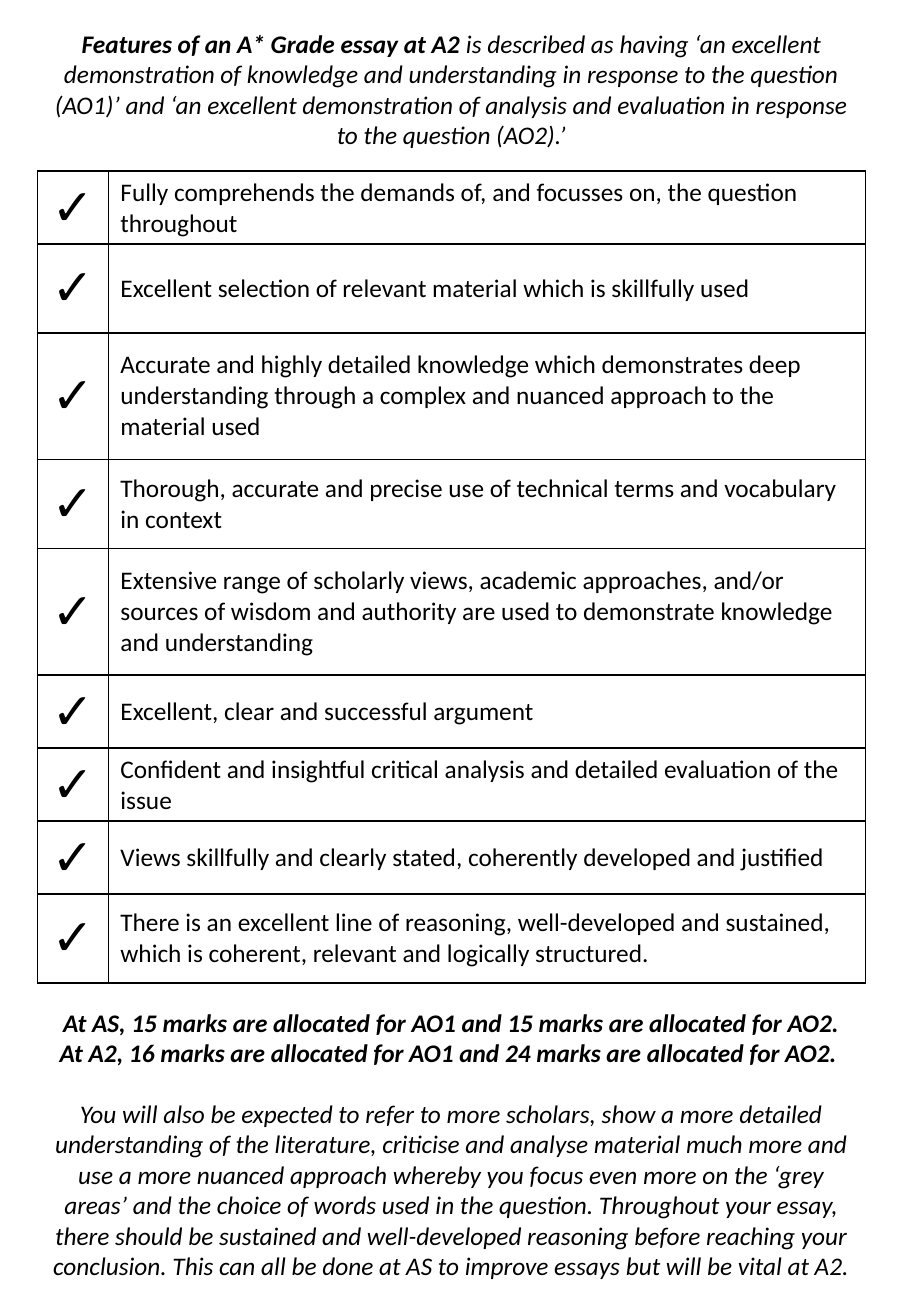
import lxml.etree
import pptx
import pptx.dml.color
import pptx.enum.text
import pptx.oxml.ns
import pptx.util

BLACK = pptx.dml.color.RGBColor(0, 0, 0)
CENTER = pptx.enum.text.PP_ALIGN.CENTER
LEFT = pptx.enum.text.PP_ALIGN.LEFT
MIDDLE = pptx.enum.text.MSO_ANCHOR.MIDDLE
SCALE = 7620
MARGIN, WIDTH = 37, 818
CHECK_WIDTH = 70
SHORT, MEDIUM, TALL = 72, 88, 125

CRITERIA = [
    (SHORT, "Fully comprehends the demands of, and focusses on, the question throughout"),
    (MEDIUM, "Excellent selection of relevant material which is skillfully used"),
    (TALL, "Accurate and highly detailed knowledge which demonstrates deep understanding "
           "through a complex and nuanced approach to the material used"),
    (MEDIUM, "Thorough, accurate and precise use of technical terms and vocabulary in context"),
    (TALL, "Extensive range of scholarly views, academic approaches, and/or sources of wisdom "
           "and authority are used to demonstrate knowledge and understanding"),
    (SHORT, "Excellent, clear and successful argument"),
    (SHORT, "Confident and insightful critical analysis and detailed evaluation of the issue"),
    (SHORT, "Views skillfully and clearly stated, coherently developed and justified"),
    (MEDIUM, "There is an excellent line of reasoning, well-developed and sustained, "
             "which is coherent, relevant and logically structured."),
]
GRADE_TITLE = "Features of an A* Grade essay at A2 "
GRADE_DESCRIPTION = (
    "is described as having ‘an excellent demonstration of knowledge and understanding "
    "in response to the question (AO1)’ and ‘an excellent demonstration of analysis and "
    "evaluation in response to the question (AO2).’"
)
MARKS = (
    "At AS, 15 marks are allocated for AO1 and 15 marks are allocated for AO2. "
    "At A2, 16 marks are allocated for AO1 and 24 marks are allocated for AO2. "
)
EXPECTATIONS = (
    "You will also be expected to refer to more scholars, show a more detailed "
    "understanding of the literature, criticise and analyse material much more and use "
    "a more nuanced approach whereby you focus even more on the ‘grey areas’ and the "
    "choice of words used in the question. Throughout your essay, there should be "
    "sustained and well-developed reasoning before reaching your conclusion. This can "
    "all be done at AS to improve essays but will be vital at A2."
)


def px(length):
    return pptx.util.Emu(length * SCALE)


class Handout:
    """Draws the essay handout's text and checklist in one style."""

    font_name = "Calibri"
    body_size = 15
    check_size = 30

    def __init__(self, slide):
        self.slide = slide

    def add_words(self, paragraph, text, **changes):
        run = paragraph.add_run()
        run.text = text
        style = {"name": self.font_name, "size": self.body_size, "bold": False, "italic": False}
        style.update(changes)
        style["size"] = pptx.util.Pt(style["size"])
        for attribute, value in style.items():
            setattr(run.font, attribute, value)
        run.font.color.rgb = BLACK

    def passage(self, top, height, paragraphs):
        box = self.slide.shapes.add_textbox(px(MARGIN), px(top), px(WIDTH), px(height))
        frame = box.text_frame
        frame.word_wrap = True
        for index, runs in enumerate(paragraphs):
            paragraph = frame.add_paragraph() if index else frame.paragraphs[0]
            paragraph.alignment = CENTER
            if index:
                paragraph.space_before = pptx.util.Pt(18)
            for text, bold in runs:
                self.add_words(paragraph, text, bold=bold, italic=True)

    def border(self, cell):
        properties = cell._tc.get_or_add_tcPr()
        for index, side in enumerate(("lnL", "lnR", "lnT", "lnB")):
            line = lxml.etree.Element(pptx.oxml.ns.qn(f"a:{side}"), w=str(pptx.util.Pt(1)))
            fill = lxml.etree.SubElement(line, pptx.oxml.ns.qn("a:solidFill"))
            lxml.etree.SubElement(fill, pptx.oxml.ns.qn("a:srgbClr"), val=str(BLACK))
            properties.insert(index, line)

    def cell(self, cell, text, alignment, **changes):
        cell.vertical_anchor = MIDDLE
        cell.fill.background()
        self.border(cell)
        paragraph = cell.text_frame.paragraphs[0]
        paragraph.alignment = alignment
        self.add_words(paragraph, text, **changes)

    def checklist(self, top, criteria):
        total = sum(height for height, _ in criteria)
        frame = self.slide.shapes.add_table(
            len(criteria), 2, px(MARGIN), px(top), px(WIDTH), px(total)
        )
        table = frame.table
        for attribute in ("first_row", "horz_banding"):
            setattr(table, attribute, False)
        for column, width in zip(table.columns, (CHECK_WIDTH, WIDTH - CHECK_WIDTH)):
            column.width = px(width)
        for index, (height, criterion) in enumerate(criteria):
            table.rows[index].height = px(height)
            self.cell(table.cell(index, 0), "✓", CENTER, size=self.check_size, bold=True)
            self.cell(table.cell(index, 1), criterion, LEFT)


def main():
    presentation = pptx.Presentation()
    presentation.slide_width = px(900)
    presentation.slide_height = px(1300)
    handout = Handout(presentation.slides.add_slide(presentation.slide_layouts[6]))
    handout.passage(22, 133, [[(GRADE_TITLE, True), (GRADE_DESCRIPTION, False)]])
    handout.checklist(169, CRITERIA)
    handout.passage(989, 284, [[(MARKS, True)], [(EXPECTATIONS, False)]])
    presentation.save("out.pptx")


if __name__ == "__main__":
    main()
